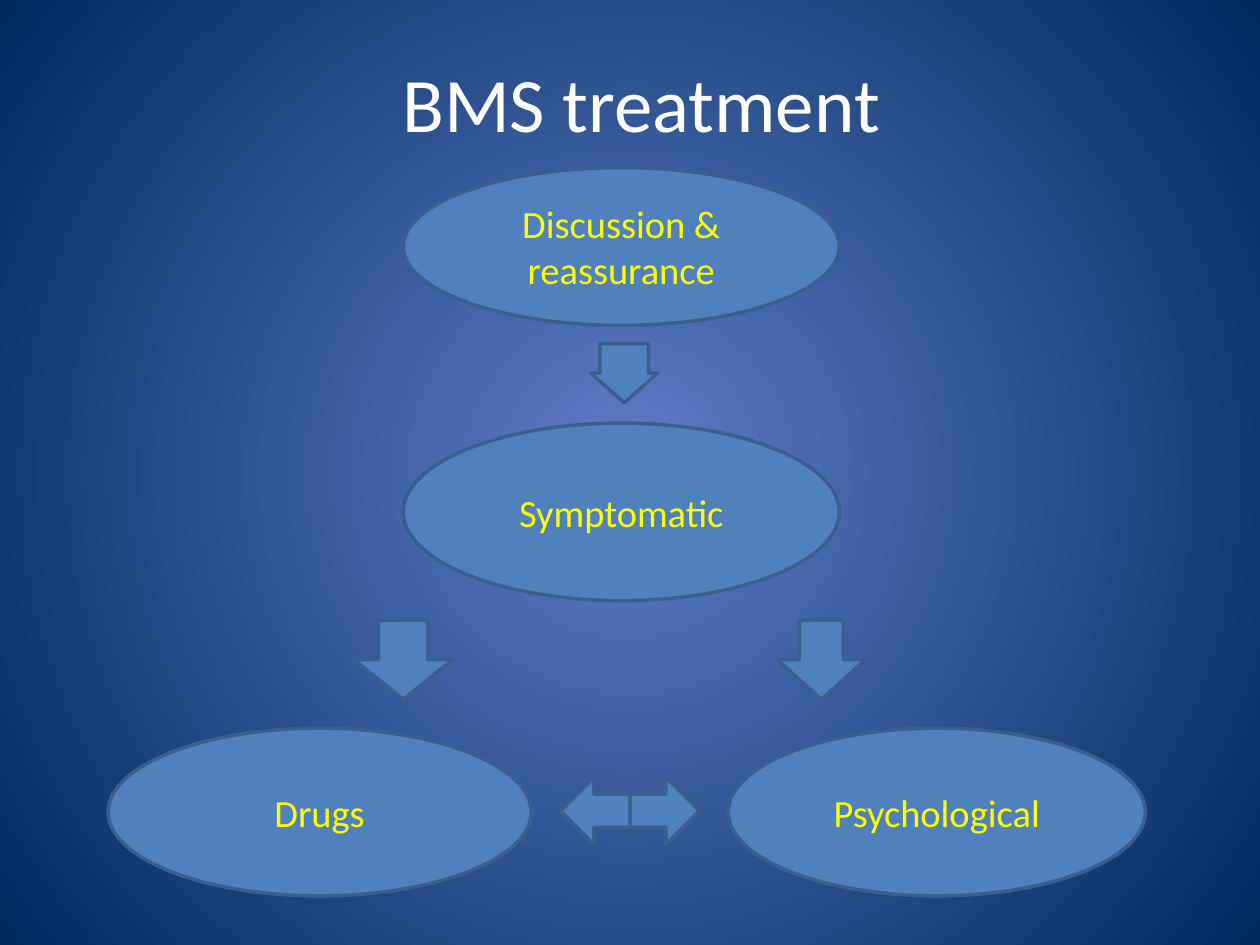
import pptx
import pptx.util
import pptx.dml.color
import pptx.enum.shapes
import pptx.enum.text
import pptx.oxml
import pptx.oxml.ns
from dataclasses import dataclass

Cm, Pt = pptx.util.Cm, pptx.util.Pt
RGB = pptx.dml.color.RGBColor.from_string
Kind = pptx.enum.shapes.MSO_SHAPE
Align = pptx.enum.text.PP_ALIGN
Anchor = pptx.enum.text.MSO_ANCHOR


@dataclass(frozen=True)
class Theme:
    font: str = "Calibri"
    glow: str = "5E7CC5"
    edge: str = "00295C"
    title: str = "FFFFFF"
    label: str = "FFFF00"
    fill: str = "4F81BD"
    line: str = "3A5F8C"
    big: int = 44
    small: int = 22
    rule: int = 2


theme = Theme()


def set_back(slide):
    """Fill the background with a glow that darkens outwards."""
    fill = slide.background.fill
    fill.gradient()
    for stop, (at, color) in zip(fill.gradient_stops, ((0, theme.glow), (1, theme.edge))):
        stop.position = at
        stop.color.rgb = RGB(color)
    grad = slide.background.fill._xPr.find(pptx.oxml.ns.qn("a:gradFill"))
    line = grad.find(pptx.oxml.ns.qn("a:lin"))
    glow = pptx.oxml.parse_xml(
        f'<a:path {pptx.oxml.ns.nsdecls("a")} path="circle">'
        '<a:fillToRect l="50000" t="50000" r="50000" b="50000"/></a:path>')
    grad.replace(line, glow)


def set_text(shape, text, size, color):
    frame = shape.text_frame
    frame.text = text
    frame.word_wrap = True
    frame.vertical_anchor = Anchor.MIDDLE
    para = frame.paragraphs[0]
    para.alignment = Align.CENTER
    font = para.runs[0].font
    for name, value in {"name": theme.font, "size": Pt(size)}.items():
        setattr(font, name, value)
    font.color.rgb = RGB(color)


def add_title(slide, box, text):
    title = slide.shapes.title
    for name, value in zip(("left", "top", "width", "height"), box):
        setattr(title, name, Cm(value))
    set_text(title, text, theme.big, theme.title)


def add_part(slide, kind, box, text=""):
    shape = slide.shapes.add_shape(kind, *map(Cm, box))
    shape.shadow.inherit = False
    shape.fill.solid()
    shape.fill.fore_color.rgb = RGB(theme.fill)
    shape.line.color.rgb = RGB(theme.line)
    shape.line.width = Pt(theme.rule)
    if text:
        set_text(shape, text, theme.small, theme.label)
    return shape


def add_steps(slide, box, first, second):
    """Stack two ovals with a down arrow between them."""
    x, y, wide, high = box
    top, low = 3.18, 3.58
    add_part(slide, Kind.OVAL, (x, y, wide, top), first)
    add_part(slide, Kind.OVAL, (x, y + high - low, wide, low), second)
    arrow = add_part(slide, Kind.DOWN_ARROW, (x + 3.78, y + 3.55, 1.35, 1.19))
    arrow.adjustments[0] = 0.73


def add_split(slide, box, left, right):
    """Lead down to two ovals that are linked both ways."""
    x, y, wide, high = box
    tall, lead = 3.38, 1.6
    top = y + high - tall
    for at, span, text in ((0, 8.53, left), (wide - 8.41, 8.41, right)):
        add_part(slide, Kind.OVAL, (x + at, top, span, tall), text)
    for at, span in ((4.96, 1.98), (13.49, 1.78)):
        add_part(slide, Kind.DOWN_ARROW, (x + at, y, span, lead))
    mid, span = x + 10.52, 1.4
    for kind, at in ((Kind.RIGHT_ARROW, mid), (Kind.LEFT_ARROW, mid - span)):
        add_part(slide, kind, (at, top + 0.99, span, 1.35))


def main():
    deck = pptx.Presentation()
    deck.slide_width, deck.slide_height = Cm(25.4), Cm(19.05)
    slide = deck.slides.add_slide(deck.slide_layouts[5])
    set_back(slide)
    add_title(slide, (1.5, 0.91, 22.86, 2.26), "BMS treatment")
    add_steps(slide, (8.13, 3.38, 8.79, 8.73), "Discussion & reassurance", "Symptomatic")
    add_split(slide, (2.18, 12.5, 20.91, 5.56), "Drugs", "Psychological")
    deck.save("out.pptx")


if __name__ == "__main__":
    main()
